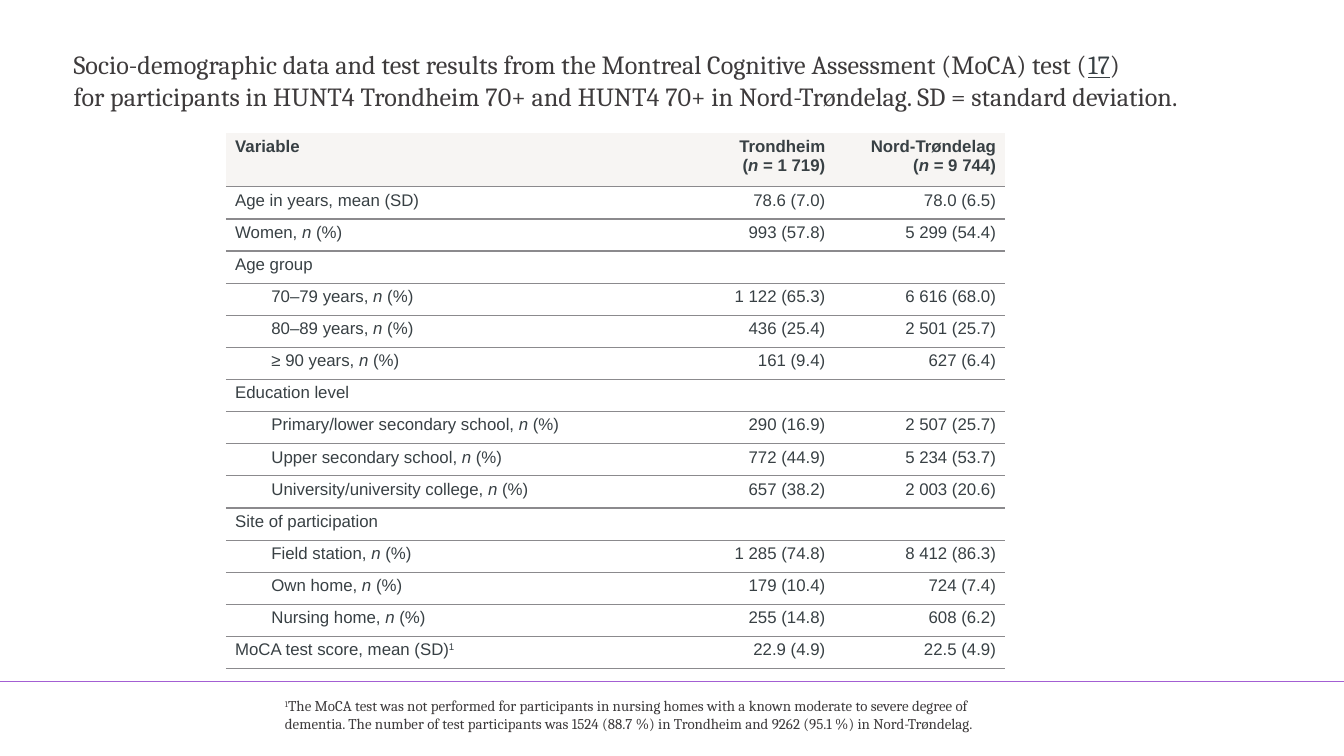
import pptx
import pptx.dml.color
import pptx.enum.shapes
import pptx.enum.text
import pptx.oxml
import pptx.oxml.ns
import pptx.util

Inches, Pt = pptx.util.Inches, pptx.util.Pt
RGB = pptx.dml.color.RGBColor
INK = RGB(0x3E, 0x3B, 0x3C)
SLATE = RGB(0x38, 0x40, 0x44)
RULE = RGB(0x8B, 0x8A, 0x8D)
PURPLE = RGB(0xA3, 0x5E, 0xD3)
HEAD = RGB(0xF7, 0xF5, 0xF3)
WHITE = RGB(0xFF, 0xFF, 0xFF)
RIGHT = pptx.enum.text.PP_ALIGN.RIGHT
MIDDLE = pptx.enum.text.MSO_ANCHOR.MIDDLE


def count(name):
    return [name + ", ", ("n", "italic"), " (%)"]


def size(place, total):
    return [place, "\n", "(", ("n", "italic"), f" = {total})"]


# Each row: label, indented or not, Trondheim, Nord-Trøndelag
ROWS = [
    (["Age in years, mean (SD)"], False, "78.6 (7.0)", "78.0 (6.5)"),
    (count("Women"), False, "993 (57.8)", "5 299 (54.4)"),
    (["Age group"], False, "", ""),
    (count("70–79 years"), True, "1 122 (65.3)", "6 616 (68.0)"),
    (count("80–89 years"), True, "436 (25.4)", "2 501 (25.7)"),
    (count("≥ 90 years"), True, "161 (9.4)", "627 (6.4)"),
    (["Education level"], False, "", ""),
    (count("Primary/lower secondary school"), True, "290 (16.9)", "2 507 (25.7)"),
    (count("Upper secondary school"), True, "772 (44.9)", "5 234 (53.7)"),
    (count("University/university college"), True, "657 (38.2)", "2 003 (20.6)"),
    (["Site of participation"], False, "", ""),
    (count("Field station"), True, "1 285 (74.8)", "8 412 (86.3)"),
    (count("Own home"), True, "179 (10.4)", "724 (7.4)"),
    (count("Nursing home"), True, "255 (14.8)", "608 (6.2)"),
    (["MoCA test score, mean (SD)", ("1", "super")], False, "22.9 (4.9)", "22.5 (4.9)"),
]


def write(para, parts, face, points, color, bold=False):
    """Fill a paragraph with plain strings, (text, style) pairs and breaks."""
    font = para.font
    font.name, font.size, font.bold = face, Pt(points), bold
    font.color.rgb = color
    for part in parts:
        if part == "\n":
            para.add_line_break()
            continue
        text, style = (part, "") if isinstance(part, str) else part
        run = para.add_run()
        run.text = text
        if style == "italic":
            run.font.italic = True
        elif style == "under":
            run.font.underline = True
            run.font.color.rgb = SLATE
        elif style == "super":
            run.font._element.set("baseline", "30000")


def pad(frame, left, top, right, bottom):
    frame.margin_left, frame.margin_top = Inches(left), Inches(top)
    frame.margin_right, frame.margin_bottom = Inches(right), Inches(bottom)


def edge(cell, sides):
    """Rule the given sides of a cell and clear the others."""
    props = cell._tc.get_or_add_tcPr()
    space = pptx.oxml.ns.nsdecls("a")
    for side in "LRTB":
        paint = f'<a:solidFill><a:srgbClr val="{RULE}"/></a:solidFill>'
        if side not in sides:
            paint = "<a:noFill/>"
        props.append(pptx.oxml.parse_xml(
            f'<a:ln{side} {space} w="{Pt(0.75)}">{paint}</a:ln{side}>'))


def dress(cell, parts, fill, sides, bold, align):
    edge(cell, sides)
    cell.fill.solid()
    cell.fill.fore_color.rgb = fill
    pad(cell, 0.07, 0.03, 0.07, 0.03)
    para = cell.text_frame.paragraphs[0]
    para.alignment = align
    write(para, parts, "Arial", 9, SLATE, bold)
    if not parts:
        # Keeps an empty cell as low as its row
        para._p.append(pptx.oxml.parse_xml(
            f'<a:endParaRPr {pptx.oxml.ns.nsdecls("a")} sz="900"/>'))


def add_title(slide, left, top, width, height):
    box = slide.shapes.add_textbox(*map(Inches, (left, top, width, height)))
    box.fill.solid()
    box.fill.fore_color.rgb = WHITE
    frame = box.text_frame
    frame.word_wrap = True
    frame.vertical_anchor = MIDDLE
    pad(frame, 0.1, 0.05, 0.02, 0.05)
    write(frame.paragraphs[0],
          ["Socio-demographic data and test results from the Montreal "
           "Cognitive Assessment (MoCA) test (", ("17", "under"), ")"],
          "Cambria", 14, INK)
    write(frame.add_paragraph(),
          ["for participants in HUNT4 Trondheim 70+ and HUNT4 70+ in "
           "Nord-Trøndelag. SD = standard deviation."],
          "Cambria", 14, INK)


def add_data(slide, left, top, width, height):
    shape = slide.shapes.add_table(
        len(ROWS) + 1, 4, *map(Inches, (left, top, width, height)))
    table = shape.table
    table.first_row = table.horz_banding = False
    for col, wide in zip(table.columns, (0.27, 3.18, 1.08, 1.27)):
        col.width = Inches(wide)
    first = 0.4
    for num, row in enumerate(table.rows):
        row.height = Inches((height - first) / len(ROWS) if num else first)

    lines = [(["Variable"], False, size("Trondheim", "1 719"),
              size("Nord-Trøndelag", "9 744"))]
    lines += [(label, deep, [one] if one else [], [two] if two else [])
              for label, deep, one, two in ROWS]
    for num, (label, deep, one, two) in enumerate(lines):
        fill, sides = (WHITE, "TB") if num else (HEAD, "B")
        names = ([], label) if deep else (label, [])
        for col, parts in enumerate((*names, one, two)):
            dress(table.cell(num, col), parts, fill, sides,
                  num == 0, RIGHT if col > 1 else None)
        if not deep:
            table.cell(num, 0).merge(table.cell(num, 1))


def add_rule(slide, left, top, width):
    line = slide.shapes.add_connector(
        pptx.enum.shapes.MSO_CONNECTOR.STRAIGHT,
        *map(Inches, (left, top, left + width, top)))
    line.line.color.rgb = PURPLE
    line.line.width = Pt(0.75)
    line._element.spPr.append(pptx.oxml.parse_xml(
        f'<a:effectLst {pptx.oxml.ns.nsdecls("a")}/>'))


def add_note(slide, left, top, width, height):
    box = slide.shapes.add_textbox(*map(Inches, (left, top, width, height)))
    frame = box.text_frame
    frame.word_wrap = True
    frame.vertical_anchor = MIDDLE
    # The bottom margin lifts the centred text
    pad(frame, 0, 0, 0, 0.12)
    write(frame.paragraphs[0],
          [("1", "super"),
           "The MoCA test was not performed for participants in nursing homes "
           "with a known moderate to severe degree of dementia. The number of "
           "test participants was 1524 (88.7 %) in Trondheim and 9262 "
           "(95.1 %) in Nord-Trøndelag."],
          "Cambria", 8, INK)


def main():
    deck = pptx.Presentation()
    # Widescreen, 16 to 9
    deck.slide_width = Inches(10)
    deck.slide_height = deck.slide_width * 9 // 16
    slide = deck.slides.add_slide(deck.slide_layouts[6])
    add_rule(slide, 0, 5.07, 10)
    add_data(slide, 1.68, 0.99, 5.8, 3.99)
    add_note(slide, 2.12, 5.25, 5.19, 0.26)
    add_title(slide, 0.45, 0.31, 9.27, 0.57)
    deck.save("out.pptx")


if __name__ == "__main__":
    main()
